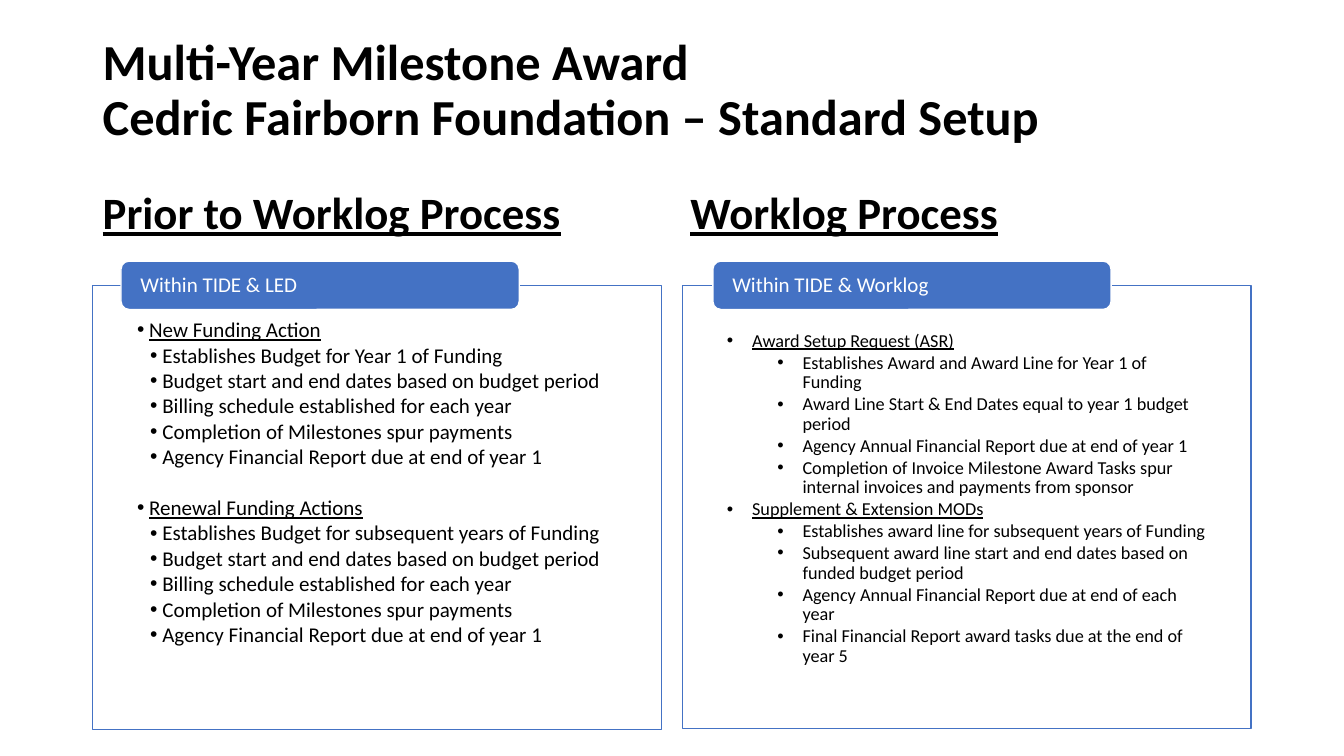
import pptx
import pptx.util
import pptx.dml.color
import pptx.enum.shapes
import pptx.enum.text
import pptx.oxml.ns
from lxml import etree

PX = 9144  # 100 px to the inch
Pt = pptx.util.Pt
RGB = pptx.dml.color.RGBColor.from_string
KIND = pptx.enum.shapes.MSO_SHAPE
ANCHOR = pptx.enum.text.MSO_ANCHOR
qn = pptx.oxml.ns.qn
HUES = {"ink": "000000", "blue": "4472C4", "white": "FFFFFF"}


def write(frame, lines, size, hue="ink", bold=False, under=False, spacing=0.9,
          before=0, after=0, anchor=ANCHOR.TOP, pad=(10, 5, 10, 5),
          steps=None, gap=0):
    """Fill a frame; steps gives (margin, hang) in px per bullet level."""
    frame.word_wrap = True
    frame.vertical_anchor = anchor
    (frame.margin_left, frame.margin_top,
     frame.margin_right, frame.margin_bottom) = [n * PX for n in pad]
    for i, (level, text) in enumerate(lines):
        para = frame.paragraphs[0] if i == 0 else frame.add_paragraph()
        para.alignment = pptx.enum.text.PP_ALIGN.LEFT
        para.line_spacing = spacing
        para.space_before = Pt(gap if i and level == 0 else before)
        para.space_after = Pt(after)
        para.text = text
        for run in para.runs:
            font = run.font
            font.name, font.size, font.bold = "Calibri", Pt(size), bold
            font.underline = under or (steps is not None and level == 0)
            font.color.rgb = RGB(HUES[hue])
        if steps:
            margin, hang = steps[level]
            para.level = level + 1
            props = para._p.get_or_add_pPr()
            props.set("marL", str(margin * PX))
            props.set("indent", str(-hang * PX))
            etree.SubElement(props, qn("a:buFont")).set("typeface", "Arial")
            etree.SubElement(props, qn("a:buChar")).set("char", "•")


def block(kind, box, fill, line):
    shape = slide.shapes.add_shape(kind, *[n * PX for n in box])
    shape.shadow.inherit = False
    shape.fill.solid()
    shape.fill.fore_color.rgb = RGB(HUES[fill])
    shape.line.color.rgb = RGB(HUES[line])
    shape.line.width = Pt(1)
    return shape


deck = pptx.Presentation()
deck.slide_width, deck.slide_height = 1333 * PX, 750 * PX
slide = deck.slides.add_slide(deck.slide_layouts[6])

title = slide.shapes.add_textbox(92 * PX, 40 * PX, 1150 * PX, 102 * PX)
write(title.text_frame,
      [(0, "Multi-Year Milestone Award\nCedric Fairborn Foundation – Standard Setup")],
      36, bold=True, anchor=ANCHOR.MIDDLE)

yearly = [
    (1, "Budget start and end dates based on budget period"),
    (1, "Billing schedule established for each year"),
    (1, "Completion of Milestones spur payments"),
    (1, "Agency Financial Report due at end of year 1"),
]
prior = [
    (0, "New Funding Action"),
    (1, "Establishes Budget for Year 1 of Funding"),
    *yearly,
    (0, "Renewal Funding Actions"),
    (1, "Establishes Budget for subsequent years of Funding"),
    *yearly,
]
current = [
    (0, "Award Setup Request (ASR)"),
    (1, "Establishes Award and Award Line for Year 1 of Funding"),
    (1, "Award Line Start & End Dates equal to year 1 budget period"),
    (1, "Agency Annual Financial Report due at end of year 1"),
    (1, "Completion of Invoice Milestone Award Tasks spur internal invoices "
        "and payments from sponsor"),
    (0, "Supplement & Extension MODs"),
    (1, "Establishes award line for subsequent years of Funding"),
    (1, "Subsequent award line start and end dates based on funded budget period"),
    (1, "Agency Annual Financial Report due at end of each year"),
    (1, "Final Financial Report award tasks due at the end of year 5"),
]
# heading left, heading, panel left, panel height, tab left, tab text, list, format
sides = [
    (92, "Prior to Worklog Process", 92, 441, 120, "Within TIDE & LED", prior,
     dict(size=15, after=1.9, gap=18.4, pad=(44, 34, 44, 12),
          steps=[(12, 12), (25, 12)])),
    (675, "Worklog Process", 677, 440, 707, "Within TIDE & Worklog", current,
     dict(size=13, after=1.6, pad=(44, 46, 44, 16),
          steps=[(25, 25), (75, 25)])),
]
for left, name, edge, tall, start, label, items, style in sides:
    head = slide.shapes.add_textbox(left * PX, 184 * PX, 565 * PX, 57 * PX)
    write(head.text_frame, [(0, name)], 32, bold=True, under=True,
          spacing=0.8, before=10, anchor=ANCHOR.BOTTOM)

    panel = block(KIND.RECTANGLE, (edge, 283, 564, tall), "white", "blue")
    tint = panel._element.spPr.find(qn("a:solidFill"))[0]
    etree.SubElement(tint, qn("a:alpha")).set("val", "90000")
    write(panel.text_frame, items, **style)

    tab = block(KIND.ROUNDED_RECTANGLE, (start, 259, 395, 48), "blue", "white")
    write(tab.text_frame, [(0, label)], 15, hue="white",
          anchor=ANCHOR.MIDDLE, pad=(17, 2, 17, 2))

deck.save("out.pptx")
